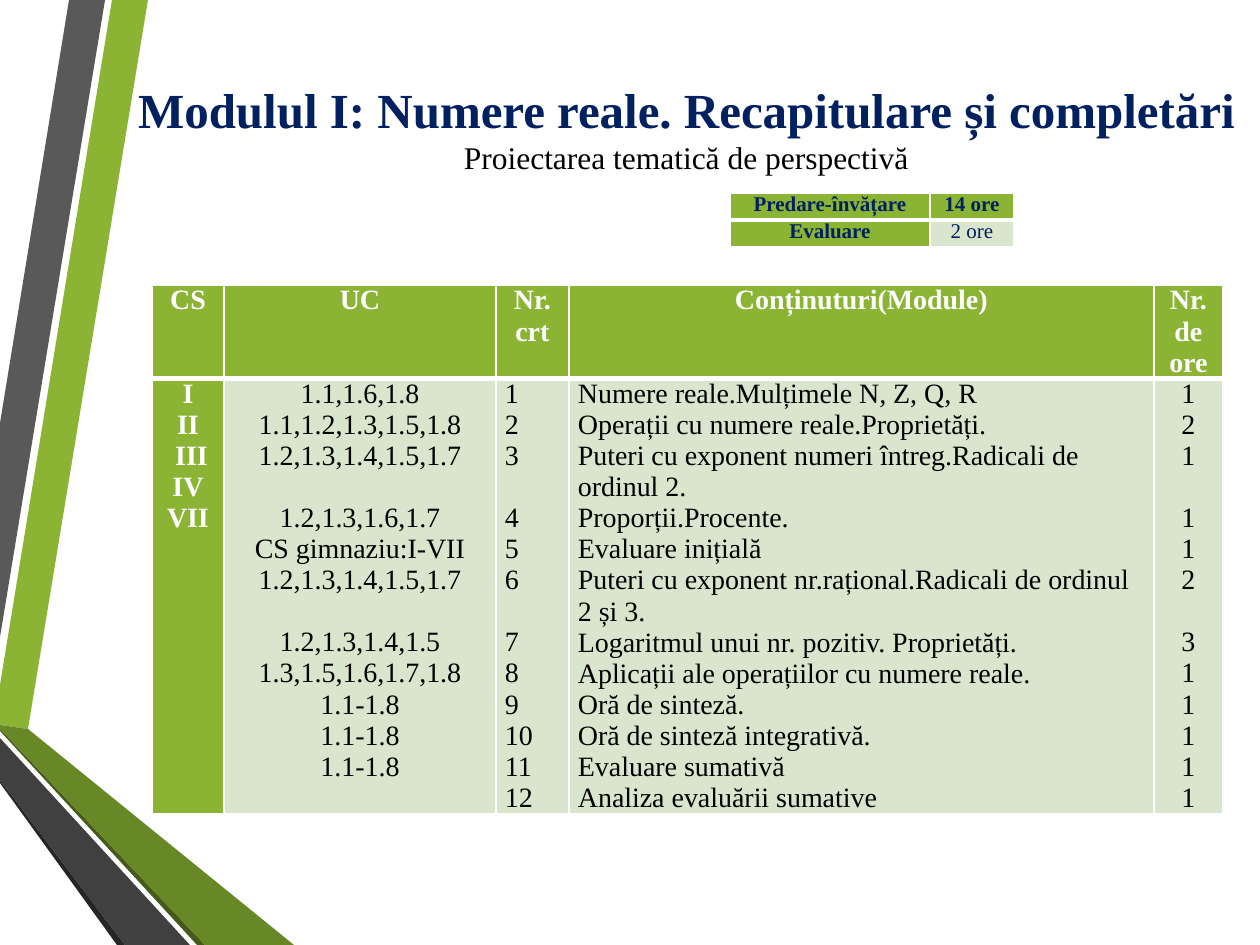
from lxml.etree import SubElement
from pptx import Presentation
from pptx.dml.color import RGBColor
from pptx.enum.text import MSO_ANCHOR, PP_ALIGN
from pptx.oxml.ns import qn
from pptx.util import Pt

SCALE = 914400 / 126
FONT = "Times New Roman"
GREEN, PALE, NAVY = "8BB434", "DAE5CE", "002060"
WHITE, BLACK = "FFFFFF", "000000"
MID, LEFT = PP_ALIGN.CENTER, PP_ALIGN.LEFT
LINE = 17.7  # height in points of one 16 pt line

BANDS = [
    (GREEN, [(0, 685), (0, 725), (28, 729), (148, 0), (112, 0)]),
    ("595959", [(105, 0), (69, 0), (0, 423), (0, 637)]),
    ("262626", [(0, 780), (0, 783), (117, 945), (125, 945)]),
    ("465A1A", [(0, 729), (0, 731), (197, 945), (205, 945)]),
    ("688727", [(0, 729), (205, 945), (294, 945), (28, 729), (0, 725)]),
    ("404040", [(0, 780), (125, 945), (190, 945), (0, 738)]),
]
TITLE = [
    ("Modulul I: Numere reale. Recapitulare și completări", 28, NAVY, True),
    ("Proiectarea tematică de perspectivă", 18, BLACK, False),
]
HOURS = [("Predare-învățare", "14 ore"), ("Evaluare", "2 ore")]
HEADS = [["CS"], ["UC"], ["Nr.", "crt"], ["Conținuturi(Module)"], ["Nr.de ore"]]
SKILLS = ["I", "II", " III", "IV", "VII"]
# competences, content, hours
TOPICS = [
    ("1.1,1.6,1.8", "Numere reale.Mulțimele N, Z, Q, R", 1),
    ("1.1,1.2,1.3,1.5,1.8", "Operații cu numere reale.Proprietăți.", 2),
    ("1.2,1.3,1.4,1.5,1.7", "Puteri cu exponent numeri întreg.Radicali de ordinul 2.", 1),
    ("1.2,1.3,1.6,1.7", "Proporții.Procente.", 1),
    ("CS gimnaziu:I-VII", "Evaluare inițială", 1),
    ("1.2,1.3,1.4,1.5,1.7",
     "Puteri cu exponent nr.rațional.Radicali de ordinul 2 și 3.", 2),
    ("1.2,1.3,1.4,1.5", "Logaritmul unui nr. pozitiv. Proprietăți.", 3),
    ("1.3,1.5,1.6,1.7,1.8", "Aplicații ale operațiilor cu numere reale.", 1),
    ("1.1-1.8", "Oră de sinteză.", 1),
    ("1.1-1.8", "Oră de sinteză integrativă.", 1),
    ("1.1-1.8", "Evaluare sumativă", 1),
    ("", "Analiza evaluării sumative", 1),
]
AFTER_WRAP = {3, 6}  # topics that follow a two-line content


def px(n):
    return round(n * SCALE)


def rgb(code):
    return RGBColor.from_string(code)


def write(para, text, size, color, bold, align=MID):
    para.alignment = align
    run = para.add_run()
    run.text = text
    font = run.font
    font.name, font.size, font.bold = FONT, Pt(size), bold
    font.color.rgb = rgb(color)


def paras(frame, count):
    return [frame.paragraphs[0]] + [frame.add_paragraph() for _ in range(count - 1)]


def edge(cell, head):
    """White borders, with a thick rule under a header cell."""
    props = cell._tc.get_or_add_tcPr()
    for spot, side in enumerate("LRTB"):
        width = 3 if head and side == "B" else 1
        line = SubElement(props, qn("a:ln" + side), w=str(Pt(width)))
        fill = SubElement(line, qn("a:solidFill"))
        SubElement(fill, qn("a:srgbClr"), val=WHITE)
        props.remove(line)
        props.insert(spot, line)


def fill_cell(cell, lines, size, color, bold, back, head, align=MID, gaps=()):
    cell.margin_left = cell.margin_right = px(9)
    cell.margin_top = cell.margin_bottom = 0
    cell.fill.solid()
    cell.fill.fore_color.rgb = rgb(back)
    edge(cell, head)
    for i, (para, text) in enumerate(zip(paras(cell.text_frame, len(lines)), lines)):
        write(para, text, size, color, bold, align)
        if i in gaps:
            para.space_before = Pt(LINE)


def add_grid(slide, left, top, cols, rows):
    table = slide.shapes.add_table(
        len(rows), len(cols), px(left), px(top), px(sum(cols)), px(sum(rows))).table
    table.horz_banding = False
    for col, width in zip(table.columns, cols):
        col.width = px(width)
    for row, height in zip(table.rows, rows):
        row.height = px(height)
    return table


def add_bands(slide):
    for color, points in BANDS:
        pen = slide.shapes.build_freeform(*points[0], scale=SCALE)
        pen.add_line_segments(points[1:], close=True)
        band = pen.convert_to_shape()
        band.shadow.inherit = False
        band.fill.solid()
        band.fill.fore_color.rgb = rgb(color)
        band.line.fill.background()


def add_title(slide):
    frame = slide.shapes.add_textbox(px(113), px(72), px(1147), px(111)).text_frame
    frame.word_wrap = False
    frame.vertical_anchor = MSO_ANCHOR.MIDDLE
    for para, line in zip(paras(frame, len(TITLE)), TITLE):
        write(para, *line)


def add_hours(slide):
    table = add_grid(slide, 730, 193, [200, 84], [27, 27])
    for r, row in enumerate(HOURS):
        for c, text in enumerate(row):
            strong = r == 0 or c == 0
            fill_cell(table.cell(r, c), [text], 12, NAVY, strong,
                      GREEN if strong else PALE, r == 0)


def add_plan(slide):
    table = add_grid(slide, 152, 285, [72, 272, 73, 585, 69], [92, 435])
    for c, lines in enumerate(HEADS):
        fill_cell(table.cell(0, c), lines, 16, WHITE, True, GREEN, True)
    fill_cell(table.cell(1, 0), SKILLS, 16, WHITE, True, GREEN, False)
    codes, names, hours = zip(*TOPICS)
    body = [
        ([code for code in codes if code], MID, AFTER_WRAP),
        ([str(n + 1) for n in range(len(TOPICS))], LEFT, AFTER_WRAP),
        (names, LEFT, ()),
        ([str(n) for n in hours], MID, AFTER_WRAP),
    ]
    for c, (lines, align, gaps) in enumerate(body, 1):
        fill_cell(table.cell(1, c), lines, 16, BLACK, False, PALE, False, align, gaps)


def main():
    deck = Presentation()
    deck.slide_width, deck.slide_height = px(1260), px(945)
    slide = deck.slides.add_slide(deck.slide_layouts[6])
    add_bands(slide)
    add_hours(slide)
    add_plan(slide)
    add_title(slide)
    deck.save("out.pptx")


if __name__ == "__main__":
    main()
